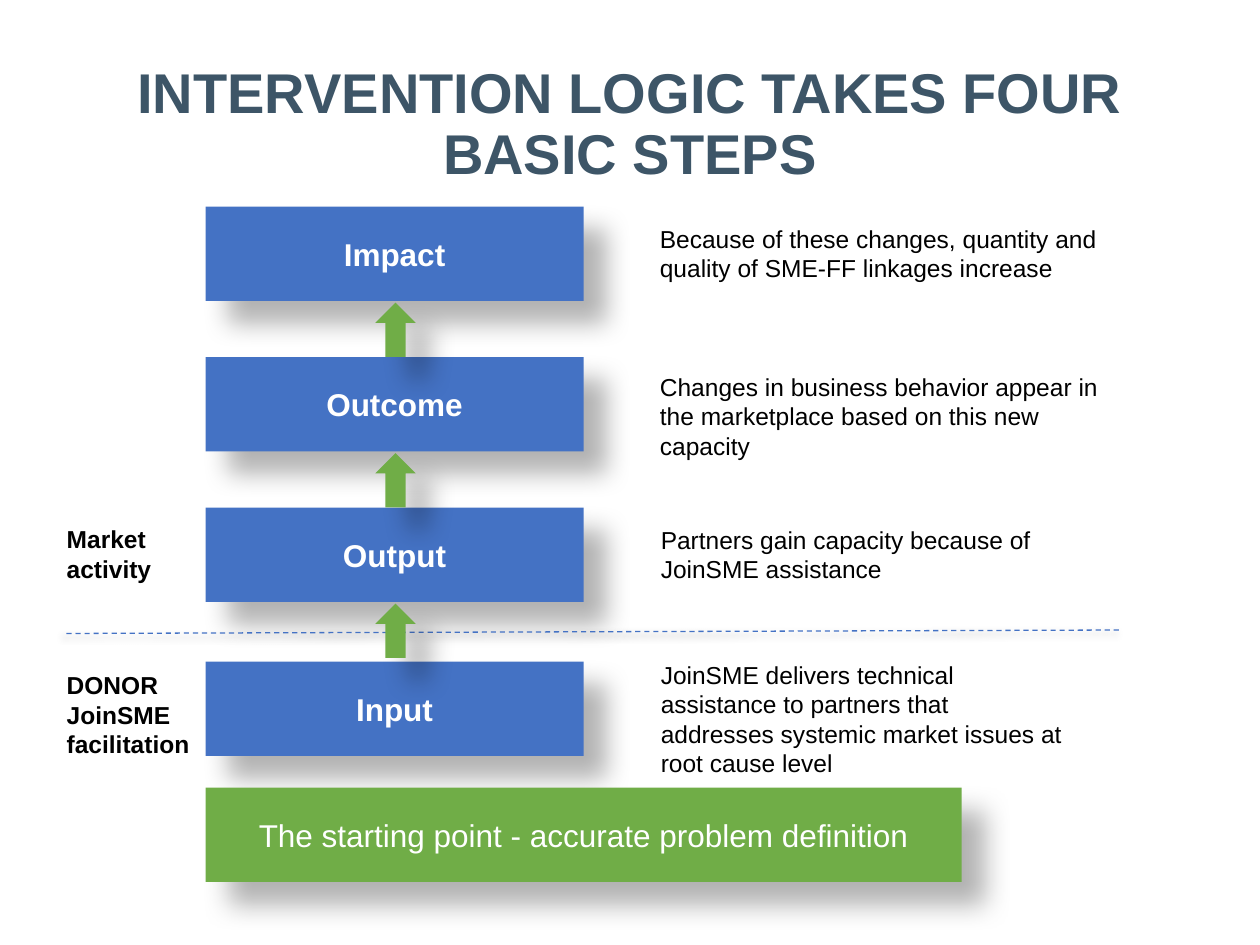
from lxml.etree import SubElement
from pptx import Presentation
from pptx.dml.color import RGBColor
from pptx.enum.dml import MSO_LINE
from pptx.enum.shapes import MSO_CONNECTOR, MSO_SHAPE
from pptx.enum.text import MSO_ANCHOR, MSO_AUTO_SIZE, PP_ALIGN
from pptx.oxml.ns import qn
from pptx.util import Pt

BLUE, GREEN, SLATE, WHITE, BLACK = "4472C4", "70AD47", "3D5567", "FFFFFF", "000000"

# Content
TITLE = "INTERVENTION LOGIC TAKES FOUR BASIC STEPS"
# step name, box top, explanation, (left, top, width, height) of the explanation
STEPS = [
    ("Impact", 118, "Because of these changes, quantity and quality of SME-FF linkages increase",
     (370, 124.5, 304.5, 41)),
    ("Outcome", 204, "Changes in business behavior appear in the marketplace based on this new capacity",
     (370, 209, 282, 58)),
    ("Output", 290, "Partners gain capacity because of JoinSME assistance",
     (370.5, 296.5, 245, 41)),
    ("Input", 378, "JoinSME delivers technical assistance to partners that "
     "addresses systemic market issues at root cause level",
     (370.5, 373.5, 245, 75)),
]
SIDE_LABELS = [
    (["Market", "activity"], (31, 296, 63, 41)),
    (["DONOR", "JoinSME", "facilitation"], (31, 379.5, 85, 58)),
]
START = "The starting point - accurate problem definition"

# Layout and formats
BOX_LEFT, BOX_WIDTH, BOX_HEIGHT = 117.5, 216, 54
ARROW_LEFT, ARROW_WIDTH, ARROW_HEIGHT = 214.5, 23, 31
DEEP_SHADOW = dict(opacity=30, blur=15, distance=18, angle=45)
LINE_SHADOW = dict(opacity=40, blur=4, distance=3, angle=135)
TITLE_FONT = dict(size=Pt(32), bold=True)
STEP_FONT = dict(size=Pt(18), bold=True)
START_FONT = dict(size=Pt(18), bold=False)
LABEL_FONT = dict(size=Pt(14), bold=True)
BODY_FONT = dict(size=Pt(14), bold=False)


def color(value):
    return RGBColor.from_string(value)


def points(box):
    return [Pt(length) for length in box]


def add_shadow(properties, opacity, blur, distance, angle):
    effects = properties.find(qn("a:effectLst"))
    if effects is None:
        effects = SubElement(properties, qn("a:effectLst"))
    outer = SubElement(effects, qn("a:outerShdw"), blurRad=str(Pt(blur)), dist=str(Pt(distance)),
                       dir=str(angle * 60000), algn="tl", rotWithShape="0")
    tint = SubElement(outer, qn("a:srgbClr"), val=BLACK)
    SubElement(tint, qn("a:alpha"), val=str(opacity * 1000))


def write(frame, lines, font, text_color, alignment=PP_ALIGN.LEFT, line_spacing=None):
    for index, line in enumerate(lines):
        paragraph = frame.add_paragraph() if index else frame.paragraphs[0]
        paragraph.alignment = alignment
        paragraph.line_spacing = line_spacing
        run = paragraph.add_run()
        run.text = line
        for name, value in dict(font, name="Arial").items():
            setattr(run.font, name, value)
        run.font.color.rgb = color(text_color)


def add_text(slide, box, lines, font, wrap=True):
    frame = slide.shapes.add_textbox(*points(box)).text_frame
    frame.word_wrap = wrap
    frame.auto_size = MSO_AUTO_SIZE.SHAPE_TO_FIT_TEXT
    write(frame, lines, font, BLACK)


def add_block(slide, kind, box, fill, text=None, font=None):
    shape = slide.shapes.add_shape(kind, *points(box))
    shape.fill.solid()
    shape.fill.fore_color.rgb = color(fill)
    shape.line.fill.background()
    shape.shadow.inherit = False
    add_shadow(shape._element.spPr, **DEEP_SHADOW)
    if text:
        shape.text_frame.vertical_anchor = MSO_ANCHOR.MIDDLE
        write(shape.text_frame, [text], font, WHITE, PP_ALIGN.CENTER)


def main():
    presentation = Presentation()
    presentation.slide_width, presentation.slide_height = Pt(720), Pt(540)
    slide = presentation.slides.add_slide(presentation.slide_layouts[6])

    # Title
    title = slide.shapes.add_textbox(*points((32.5, 36, 655, 72))).text_frame
    title.word_wrap = True
    title.vertical_anchor = MSO_ANCHOR.MIDDLE
    write(title, [TITLE], TITLE_FONT, SLATE, PP_ALIGN.CENTER, 0.9)

    # Steps with explanations
    for name, top, explanation, box in STEPS:
        add_block(slide, MSO_SHAPE.RECTANGLE, (BOX_LEFT, top, BOX_WIDTH, BOX_HEIGHT),
                  BLUE, name, STEP_FONT)
        add_text(slide, box, [explanation], BODY_FONT)

    # Divider between facilitation and market activity
    divider = slide.shapes.add_connector(MSO_CONNECTOR.STRAIGHT, *points((38, 362, 641.5, 360)))
    divider.line.color.rgb = color(BLUE)
    divider.line.width = Pt(0.75)
    divider.line.dash_style = MSO_LINE.DASH
    add_shadow(divider._element.spPr, **LINE_SHADOW)

    # Side labels
    for lines, box in SIDE_LABELS:
        add_text(slide, box, lines, LABEL_FONT, wrap=False)

    # Arrows rising into each step from the one below
    for _, top, _, _ in STEPS[:-1]:
        add_block(slide, MSO_SHAPE.UP_ARROW,
                  (ARROW_LEFT, top + BOX_HEIGHT + 1, ARROW_WIDTH, ARROW_HEIGHT), GREEN)

    # Starting point
    add_block(slide, MSO_SHAPE.RECTANGLE, (BOX_LEFT, 450, 432, BOX_HEIGHT),
              GREEN, START, START_FONT)

    presentation.save("out.pptx")


if __name__ == "__main__":
    main()
